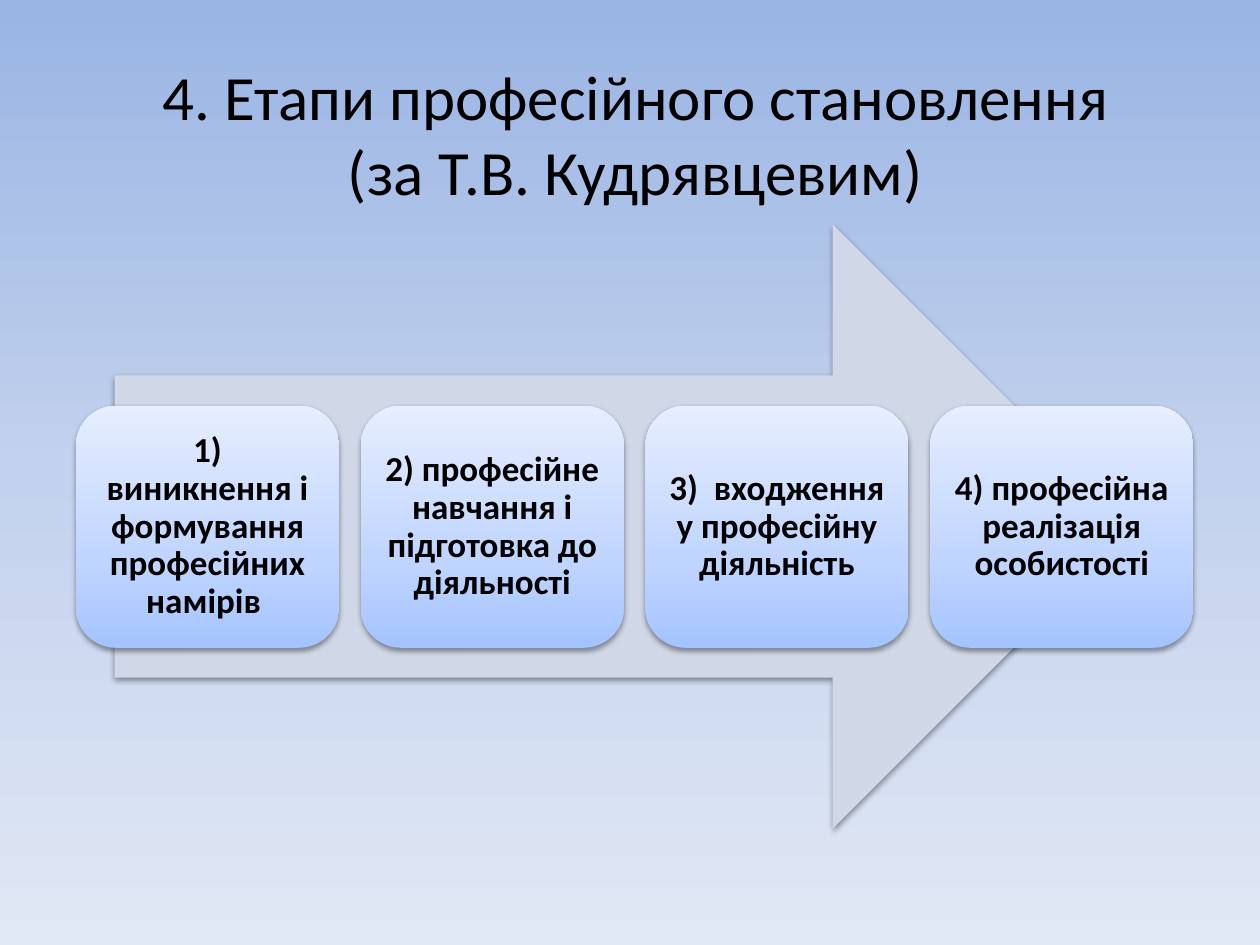
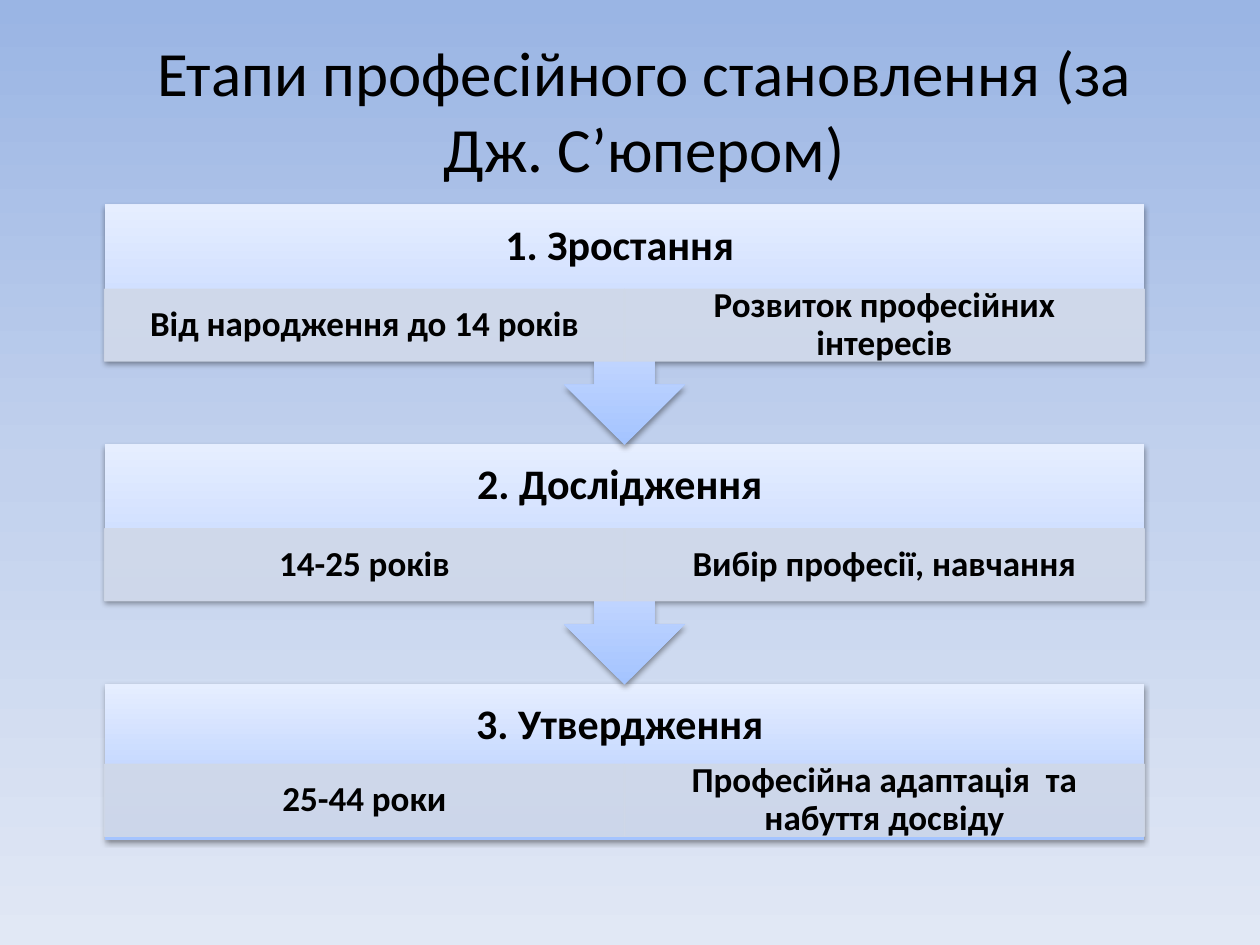
from lxml import etree
from pptx import Presentation
from pptx.dml.color import RGBColor
from pptx.enum import shapes, text
from pptx.oxml.ns import qn
from pptx.util import Cm, Pt

BLACK = RGBColor(0x00, 0x00, 0x00)
PALE = RGBColor(0xD0, 0xD8, 0xE8)
SKY = [(0, RGBColor(0x9A, 0xB5, 0xE4)), (50, RGBColor(0xC2, 0xD1, 0xED)),
       (100, RGBColor(0xE1, 0xE8, 0xF5))]
BLUE = [(0, RGBColor(0xA4, 0xC4, 0xFF)), (35, RGBColor(0xBF, 0xD4, 0xFF)),
        (100, RGBColor(0xE6, 0xEE, 0xFF))]
FONT = "Calibri"
PRESET = shapes.MSO_SHAPE


def set_gradient(fill, element, stops, angle):
    """Give a fill evenly directed colour stops; angle is counter-clockwise."""
    fill.gradient()
    fill.gradient_angle = angle
    stop_list = element.find(".//" + qn("a:gsLst"))
    for stop in list(stop_list):
        stop_list.remove(stop)
    for percent, colour in stops:
        stop = etree.SubElement(stop_list, qn("a:gs"), pos=str(percent * 1000))
        etree.SubElement(stop, qn("a:srgbClr"), val=str(colour))


def add_box(page, preset, place, words="", size=20, margins=(0, 0, 0, 0),
            gradient=True, shadow=True):
    """Add a shape with its fill, soft shadow and centred bold text."""
    box = page.shapes.add_shape(preset, *[Cm(length) for length in place])
    box.line.fill.background()
    if gradient:
        set_gradient(box.fill, box.element, BLUE, 90)
    else:
        box.fill.solid()
        box.fill.fore_color.rgb = PALE
    box.shadow.inherit = False
    if shadow:
        effects = box.element.spPr.find(qn("a:effectLst"))
        outer = etree.SubElement(effects, qn("a:outerShdw"), blurRad="40000", dist="20000",
                                 dir="5400000", rotWithShape="0")
        tint = etree.SubElement(outer, qn("a:srgbClr"), val=str(BLACK))
        etree.SubElement(tint, qn("a:alpha"), val="38000")
    if words:
        frame = box.text_frame
        frame.text = words
        frame.word_wrap = True
        frame.vertical_anchor = text.MSO_ANCHOR.MIDDLE
        (frame.margin_left, frame.margin_top,
         frame.margin_right, frame.margin_bottom) = [Cm(margin) for margin in margins]
        para = frame.paragraphs[0]
        para.alignment = text.PP_ALIGN.CENTER
        para.line_spacing = 0.9
        font = para.runs[0].font
        font.name, font.size, font.bold = FONT, Pt(size), True
        font.color.rgb = BLACK
    return box


# Deck and shared background
deck = Presentation()
deck.slide_width, deck.slide_height = Cm(25.4), Cm(19.05)
master = deck.slide_master
set_gradient(master.background.fill, master.element, SKY, 270)

# Pages with their titles
titles = [
    ("4. Етапи професійного становлення (за Т.В. Кудрявцевим)", 2.31, 0.91, 3.53),
    ("Етапи професійного становлення (за Дж. С’юпером)", 2.49, 0.5, 3.4),
]
pages = []
for words, left, top, height in titles:
    page = deck.slides.add_slide(deck.slide_layouts[5])
    title = page.shapes.title
    title.left, title.top, title.width, title.height = Cm(left), Cm(top), Cm(21), Cm(height)
    frame = title.text_frame
    frame.text = words
    frame.word_wrap = True
    frame.auto_size = text.MSO_AUTO_SIZE.NONE
    frame.vertical_anchor = text.MSO_ANCHOR.MIDDLE
    para = frame.paragraphs[0]
    para.alignment = text.PP_ALIGN.CENTER
    font = para.runs[0].font
    font.name, font.size = FONT, Pt(36)
    font.color.rgb = BLACK
    pages.append(page)
arrow_page, stages_page = pages

# Four steps along a wide arrow
add_box(arrow_page, PRESET.RIGHT_ARROW, (2.31, 4.52, 20.57, 12.19), gradient=False)
steps = [
    "1) виникнення і формування професійних намірів ",
    "2) професійне навчання і підготовка до діяльності",
    "3)  входження у професійну діяльність",
    "4) професійна реалізація особистості",
]
for index, step in enumerate(steps):
    add_box(arrow_page, PRESET.ROUNDED_RECTANGLE, (1.53 + 5.74 * index, 8.18, 5.31, 4.88),
            step, margins=(0.2, 0.2, 0.2, 0.2))

# Three stages, laid from the bottom up so that each arrow tip overlaps the next stage
stages = [
    ("1. Зростання ", "Від народження до 14 років", "Розвиток професійних інтересів"),
    ("2. Дослідження ", "14-25 років", "Вибір професії, навчання"),
    ("3. Утвердження ", "25-44 роки", "Професійна адаптація  та набуття досвіду"),
]
LEFT, CELL_WIDTH, CELL_HEIGHT = 2.11, 10.48, 1.45
for index, (heading, *details) in reversed(list(enumerate(stages))):
    top = 4.12 + 4.83 * index
    is_last = index == len(stages) - 1
    preset, height, cell_offset = ((PRESET.RECTANGLE, 3.15, 1.63) if is_last
                                   else (PRESET.DOWN_ARROW_CALLOUT, 4.85, 1.71))
    add_box(stages_page, preset, (LEFT, top, 2 * CELL_WIDTH, height), heading, 24,
            (0.48, 0, 0.48, CELL_HEIGHT))
    for column, detail in enumerate(details):
        cell = add_box(stages_page, PRESET.RECTANGLE,
                       (LEFT + CELL_WIDTH * column, top + cell_offset, CELL_WIDTH, CELL_HEIGHT),
                       detail, margins=(0.41, 0.08, 0.41, 0.08), gradient=False, shadow=False)
        cell.line.color.rgb = PALE
        cell.line.width = Pt(0.75)
        for tint in cell.element.spPr.iter(qn("a:srgbClr")):
            etree.SubElement(tint, qn("a:alpha"), val="90000")

deck.save("out.pptx")
